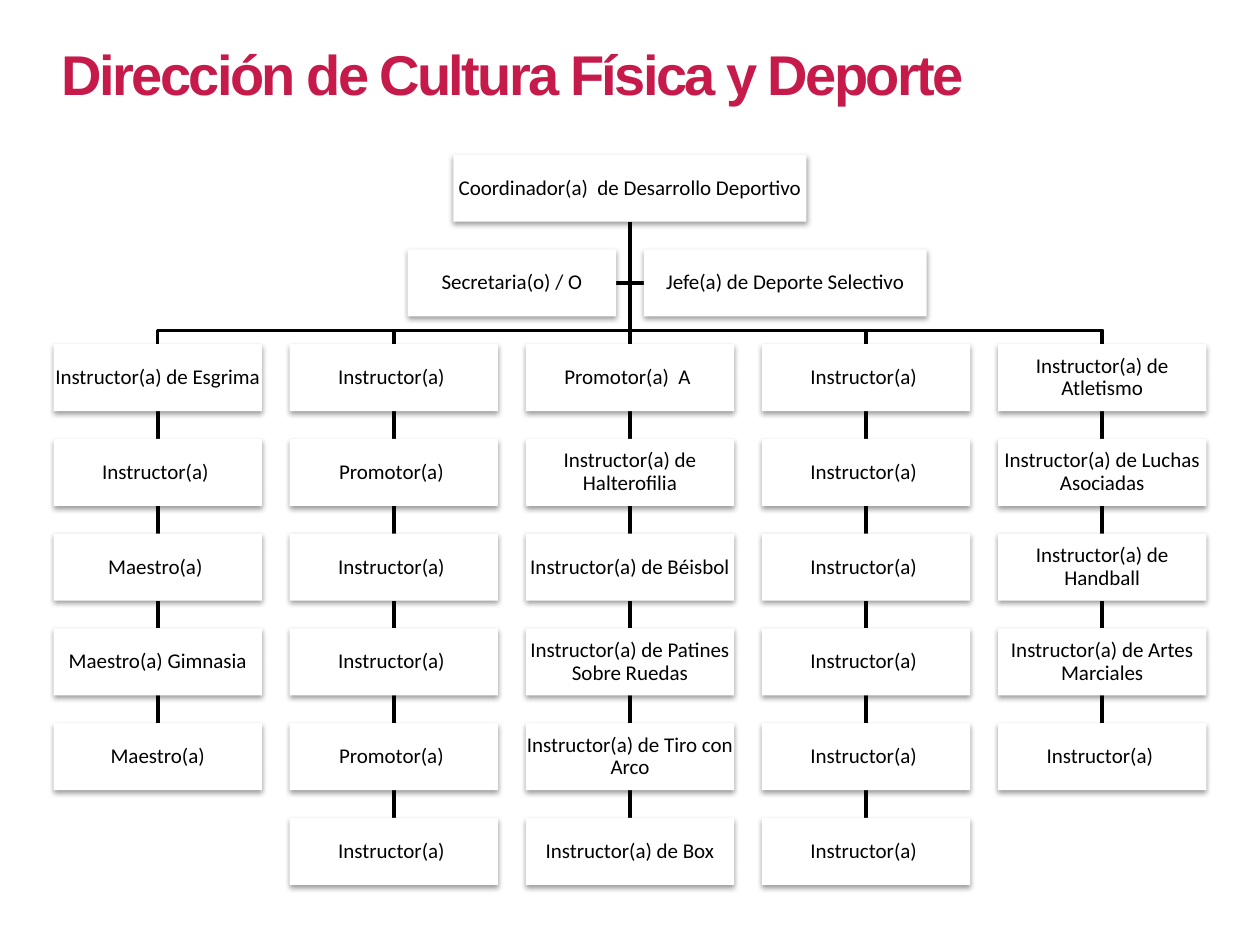
from lxml import etree
from pptx import Presentation
from pptx import util as u
from pptx.dml.color import RGBColor
from pptx.enum import shapes, text
from pptx.oxml.ns import nsdecls, qn

CENTER = 12.7
COLUMN_STEP, ROW_STEP = 4.76, 1.91
TOP = 3.12
BOX_WIDTH, BOX_HEIGHT = 4.2, 1.35
BUS_Y = 6.66
SIDE_GAP = 0.28

COLUMNS = [
    ["Instructor(a) de Esgrima", "Instructor(a) ", "Maestro(a) ",
     "Maestro(a) Gimnasia", "Maestro(a)"],
    ["Instructor(a) ", "Promotor(a) ", "Instructor(a) ",
     "Instructor(a) ", "Promotor(a) ", "Instructor(a) "],
    ["Promotor(a)  A ", "Instructor(a) de Halterofilia",
     "Instructor(a) de Béisbol", "Instructor(a) de Patines Sobre Ruedas",
     "Instructor(a) de Tiro con Arco", "Instructor(a) de Box"],
    ["Instructor(a) "] * 6,
    ["Instructor(a) de Atletismo", "Instructor(a) de Luchas Asociadas",
     "Instructor(a) de Handball", "Instructor(a) de Artes Marciales",
     "Instructor(a) "],
]

SHADOW = f"""<a:effectLst {nsdecls('a')}>
  <a:outerShdw blurRad="40000" dist="20000" dir="5400000" rotWithShape="0">
    <a:srgbClr val="000000"><a:alpha val="38000"/></a:srgbClr>
  </a:outerShdw>
</a:effectLst>"""


def color(value):
    return RGBColor.from_string(value)


def link(page, points):
    """Draw a black line through the points, given in centimetres."""
    points = [(u.Cm(x), u.Cm(y)) for x, y in points]
    if len(points) == 2:
        line = page.shapes.add_connector(
            shapes.MSO_CONNECTOR.STRAIGHT, *points[0], *points[1])
    else:
        builder = page.shapes.build_freeform(*points[0])
        builder.add_line_segments(points[1:], close=False)
        line = builder.convert_to_shape()
        line.fill.background()
    line.line.color.rgb = color("000000")
    line.line.width = u.Pt(2)
    etree.SubElement(line.element.spPr, qn("a:effectLst"))


deck = Presentation()
deck.slide_width, deck.slide_height = u.Cm(25.4), u.Cm(19.05)
page = deck.slides.add_slide(deck.slide_layouts[5])

title = page.shapes.title
title_place = {"left": 0.99, "top": 0.66, "width": 19.53, "height": 1.63}
for name, value in title_place.items():
    setattr(title, name, u.Cm(value))
title.text_frame.vertical_anchor = text.MSO_ANCHOR.TOP
title.text_frame.auto_size = text.MSO_AUTO_SIZE.SHAPE_TO_FIT_TEXT
para = title.text_frame.paragraphs[0]
para.alignment = text.PP_ALIGN.LEFT
span = para.add_run()
span.text = "Dirección de Cultura Física y Deporte"
for name, value in {"name": "Arial", "size": u.Pt(32), "bold": True}.items():
    setattr(span.font, name, value)
span.font.color.rgb = color("C51A4A")
span.font._element.set("spc", "-150")

# Each position is (left, row, width, label); row 0 is the coordinator.
positions = [
    (CENTER - 3.56, 0, 7.12, "Coordinador(a)  de Desarrollo Deportivo"),
    (CENTER - SIDE_GAP - BOX_WIDTH, 1, BOX_WIDTH, "Secretaria(o) / O"),
    (CENTER + SIDE_GAP, 1, 5.7, "Jefe(a) de Deporte Selectivo"),
]
trunk_y = TOP + BOX_HEIGHT
side_y = TOP + ROW_STEP + BOX_HEIGHT / 2
for side in (1, -1):
    link(page, [(CENTER, trunk_y), (CENTER, side_y),
                (CENTER + side * SIDE_GAP, side_y)])

for column, labels in enumerate(COLUMNS):
    x = CENTER + (column - 2) * COLUMN_STEP
    bend = [] if column == 2 else [(CENTER, BUS_Y), (x, BUS_Y)]
    link(page, [(CENTER, trunk_y), *bend, (x, TOP + 2 * ROW_STEP)])
    for row, label in enumerate(labels, start=2):
        positions.append((x - BOX_WIDTH / 2, row, BOX_WIDTH, label))
        if row > 2:
            y = TOP + row * ROW_STEP
            link(page, [(x, y - ROW_STEP + BOX_HEIGHT), (x, y)])

frame_format = {
    "word_wrap": True, "vertical_anchor": text.MSO_ANCHOR.MIDDLE,
    "margin_left": u.Cm(0.02), "margin_right": u.Cm(0.02),
    "margin_top": u.Cm(0.02), "margin_bottom": u.Cm(0.02),
}
para_format = {"alignment": text.PP_ALIGN.CENTER, "line_spacing": 0.9}
for left, row, width, label in positions:
    box = page.shapes.add_shape(
        shapes.MSO_SHAPE.RECTANGLE, u.Cm(left), u.Cm(TOP + row * ROW_STEP),
        u.Cm(width), u.Cm(BOX_HEIGHT))
    box.fill.solid()
    box.fill.fore_color.rgb = color("FFFFFF")
    box.line.fill.background()
    box.element.spPr.append(etree.fromstring(SHADOW))
    for name, value in frame_format.items():
        setattr(box.text_frame, name, value)
    para = box.text_frame.paragraphs[0]
    for name, value in para_format.items():
        setattr(para, name, value)
    span = para.add_run()
    span.text = label
    span.font.name, span.font.size = "Calibri", u.Pt(12)
    span.font.color.rgb = color("000000")

deck.save("out.pptx")
